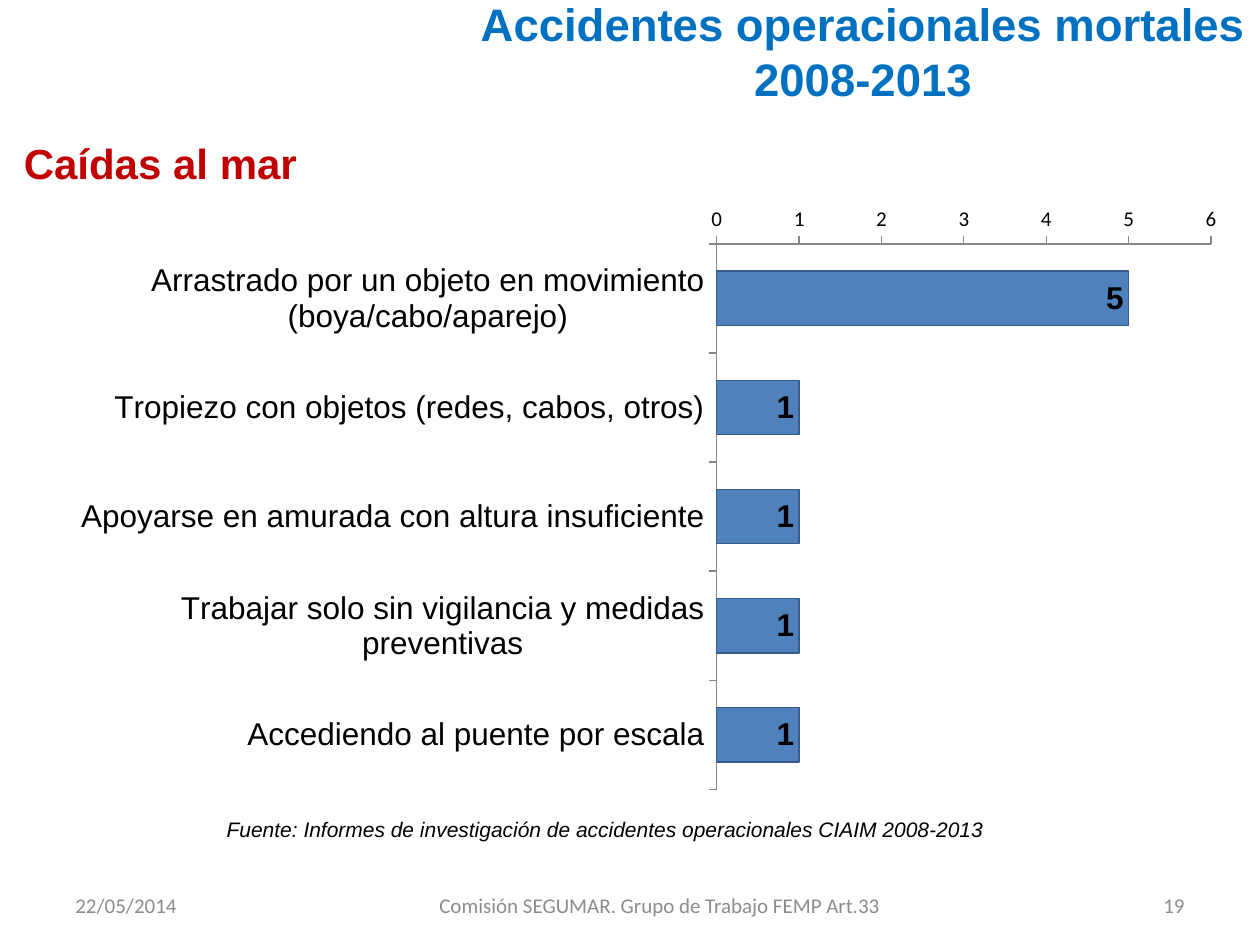
"""Build the slide on fatal falls overboard, 2008-2013."""
from lxml import etree
from pptx import Presentation
from pptx.chart.data import CategoryChartData
from pptx.dml.color import RGBColor
from pptx.enum import chart as ch, text as tx
from pptx.oxml import ns
from pptx.util import Cm, Pt

FALLS = {
    "Arrastrado por un objeto en movimiento (boya/cabo/aparejo)": 5,
    "Tropiezo con objetos (redes, cabos, otros)": 1,
    "Apoyarse en amurada con altura insuficiente": 1,
    "Trabajar solo sin vigilancia y medidas preventivas": 1,
    "Accediendo al puente por escala": 1,
}
PLOT = {"x": 0.57, "y": 0.08, "w": 0.41, "h": 0.9}


def rgb(value):
    return RGBColor.from_string(value)


def style_font(font, size, name="Arial", color="000000", bold=False, italic=False):
    font.name, font.size = name, Pt(size)
    font.bold, font.italic = bold, italic
    font.color.rgb = rgb(color)


def write(tf, content, align=tx.PP_ALIGN.LEFT, anchor=tx.MSO_ANCHOR.TOP, **font):
    tf.word_wrap = True
    tf.auto_size = tx.MSO_AUTO_SIZE.NONE
    tf.vertical_anchor = anchor
    tf.text = content
    for p in tf.paragraphs:
        p.alignment = align
        for r in p.runs:
            style_font(r.font, **font)


def place_plot(chart):
    area = chart._chartSpace.chart.plotArea
    for old in area.findall(ns.qn("c:layout")):
        area.remove(old)
    layout = etree.Element(ns.qn("c:layout"))
    manual = etree.SubElement(layout, ns.qn("c:manualLayout"))
    settings = {"layoutTarget": "inner", "xMode": "edge", "yMode": "edge", **PLOT}
    for tag, value in settings.items():
        etree.SubElement(manual, ns.qn("c:" + tag)).set("val", str(value))
    area.insert(0, layout)


class SlideBuilder:
    """Holds the style and the current slide."""

    title_color, heading_color, footer_color = "0070C0", "C00000", "8C8C8C"
    bar_color, bar_line, axis_color = "4F81BD", "385D8A", "868686"

    def __init__(self, prs):
        self.s = prs.slides.add_slide(prs.slide_layouts[5])

    def title(self, content, left, top, width, height):
        sp = self.s.shapes.title
        sp.left, sp.top, sp.width, sp.height = map(Cm, (left, top, width, height))
        write(sp.text_frame, content, align=tx.PP_ALIGN.CENTER,
              anchor=tx.MSO_ANCHOR.MIDDLE, size=26, color=self.title_color, bold=True)

    def text(self, content, left, top, width, height, **fmt):
        sp = self.s.shapes.add_textbox(*map(Cm, (left, top, width, height)))
        write(sp.text_frame, content, **fmt)

    def footer(self, content, left, width, align):
        self.text(content, left, 17.73, width, 1.02, align=align,
                  anchor=tx.MSO_ANCHOR.MIDDLE, size=12, name="Calibri",
                  color=self.footer_color)

    def axis(self, axis, size, name):
        axis.has_major_gridlines = False
        axis.major_tick_mark = ch.XL_TICK_MARK.OUTSIDE
        axis.minor_tick_mark = ch.XL_TICK_MARK.NONE
        axis.format.line.color.rgb = rgb(self.axis_color)
        axis.format.line.width = Pt(0.75)
        style_font(axis.tick_labels.font, size, name)

    def bar_chart(self, values, left, top, width, height):
        data = CategoryChartData()
        data.categories = list(values)
        data.add_series("Series 1", list(values.values()))
        chart = self.s.shapes.add_chart(
            ch.XL_CHART_TYPE.BAR_STACKED, *map(Cm, (left, top, width, height)), data).chart
        chart.has_legend = chart.has_title = False
        style_font(chart.font, 10, "Calibri")
        place_plot(chart)

        self.axis(chart.category_axis, 18, "Arial")
        chart.category_axis.reverse_order = True
        self.axis(chart.value_axis, 12, "Calibri")
        chart.value_axis.minimum_scale, chart.value_axis.maximum_scale = 0, 6
        chart.value_axis.major_unit = 1

        plot = chart.plots[0]
        plot.gap_width, plot.overlap, plot.vary_by_categories = 100, 100, False
        bars = plot.series[0]
        bars.format.fill.solid()
        bars.format.fill.fore_color.rgb = rgb(self.bar_color)
        bars.format.line.color.rgb = rgb(self.bar_line)
        bars.format.line.width = Pt(0.75)
        labels = bars.data_labels
        labels.show_value = True
        labels.position = ch.XL_LABEL_POSITION.INSIDE_END
        style_font(labels.font, 18, bold=True)


def main():
    prs = Presentation()
    prs.slide_width, prs.slide_height = Cm(25.4), Cm(19.05)
    b = SlideBuilder(prs)
    b.title("Accidentes operacionales mortales\n2008-2013", 9.3, -0.28, 16.2, 2.6)
    b.text("Caídas al mar", 0.23, 2.64, 24.08, 1.27, size=24,
           color=b.heading_color, bold=True)
    b.bar_chart(FALLS, 0.6, 3.94, 24.3, 12.22)
    b.text("Fuente: Informes de investigación de accidentes operacionales CIAIM 2008-2013",
           4.32, 16.33, 16.76, 0.76, size=12, italic=True)
    b.footer("22/05/2014", 1.27, 5.92, tx.PP_ALIGN.LEFT)
    b.footer("Comisión SEGUMAR. Grupo de Trabajo FEMP Art.33", 8.3, 10, tx.PP_ALIGN.CENTER)
    b.footer("19", 20.9, 3.23, tx.PP_ALIGN.RIGHT)
    prs.save("out.pptx")


if __name__ == "__main__":
    main()
